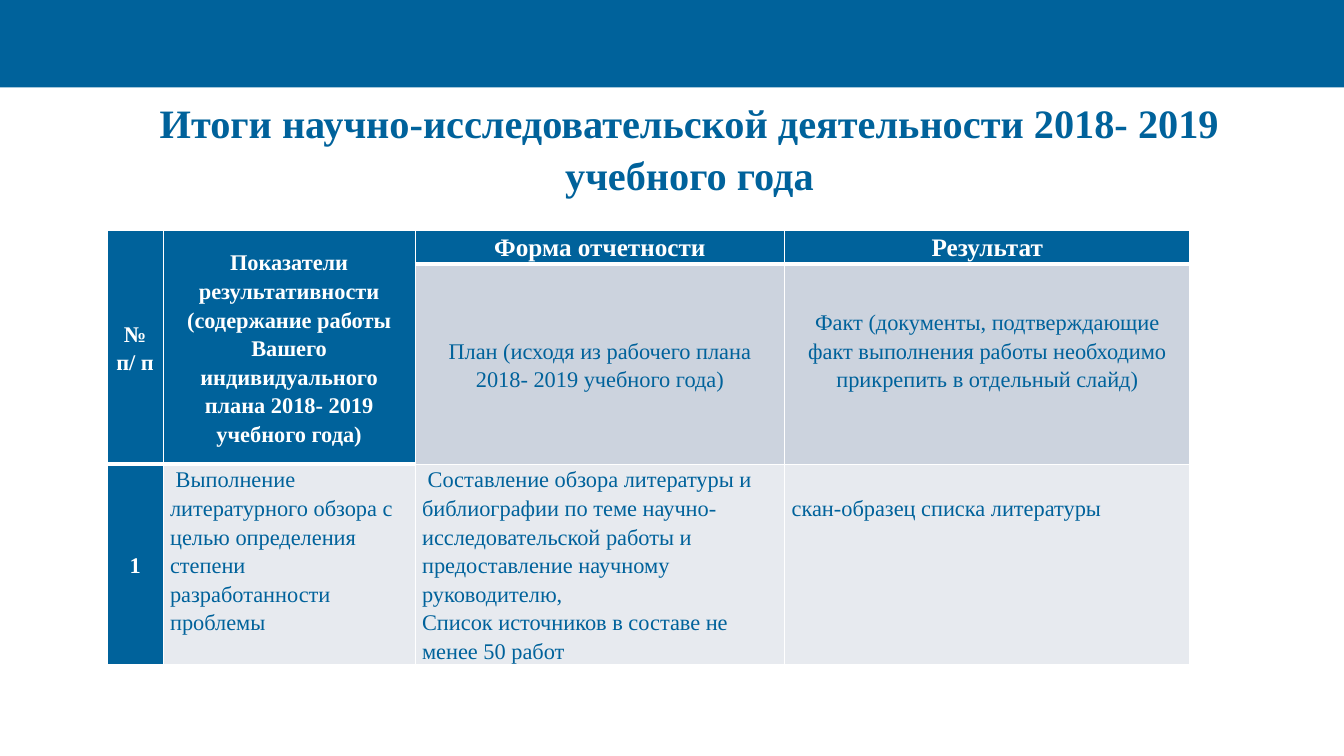
from dataclasses import dataclass

from lxml import etree
from pptx import Presentation
from pptx.dml.color import RGBColor
from pptx.enum.shapes import MSO_SHAPE
from pptx.enum.text import MSO_ANCHOR, MSO_AUTO_SIZE, PP_ALIGN
from pptx.oxml.ns import qn
from pptx.slide import Slide
from pptx.table import Table, _Cell
from pptx.text.text import _Paragraph
from pptx.util import Pt

RECTANGLE = MSO_SHAPE.RECTANGLE
TOP, MIDDLE = MSO_ANCHOR.TOP, MSO_ANCHOR.MIDDLE
LEFT, CENTER = PP_ALIGN.LEFT, PP_ALIGN.CENTER
NO_AUTOFIT = MSO_AUTO_SIZE.NONE
TITLE_ONLY_LAYOUT = 5


@dataclass(frozen=True)
class Theme:
    font: str = "Times New Roman"
    blue: str = "00629B"
    white: str = "FFFFFF"
    plan_fill: str = "CCD3DE"
    body_fill: str = "E7EAEF"
    title_size: float = 28.8
    heading_size: float = 18
    body_size: float = 16
    line_spacing: float = 1.15
    thin_border: float = 1
    thick_border: float = 3


THEME = Theme()


@dataclass(frozen=True)
class CellText:
    row: int
    column: int
    paragraphs: tuple[str, ...]
    fill: str
    color: str = THEME.blue
    size: float = THEME.body_size
    bold: bool = False
    align: PP_ALIGN = LEFT
    anchor: MSO_ANCHOR = TOP
    row_span: int = 1
    top_margin: float = 0
    bottom_margin: float = 0
    first_indent: float = 0


HEADER = {"fill": THEME.blue, "color": THEME.white, "bold": True, "align": CENTER}
PLAN = {"fill": THEME.plan_fill, "align": CENTER, "anchor": MIDDLE}
BODY = {"fill": THEME.body_fill}

TITLE = "Итоги научно-исследовательской деятельности 2018- 2019 учебного года"
COLUMN_WIDTHS = (40, 180, 264, 289.5)
ROW_HEIGHTS = (24, 142, 143)
BLANK_LINE = 20.5
CELLS = (
    CellText(0, 0, ("№ п/ п",), row_span=2, anchor=MIDDLE, **HEADER),
    CellText(0, 1, ("Показатели результативности",
                    "(содержание работы Вашего индивидуального плана 2018- 2019 учебного года)"),
             row_span=2, anchor=MIDDLE, **HEADER),
    CellText(0, 2, ("Форма отчетности",), size=THEME.heading_size, **HEADER),
    CellText(0, 3, ("Результат",), size=THEME.heading_size, **HEADER),
    CellText(1, 2, ("План (исходя из рабочего плана 2018- 2019 учебного года)",), **PLAN),
    CellText(1, 3, ("Факт (документы, подтверждающие факт выполнения работы "
                    "необходимо прикрепить в отдельный слайд)",),
             bottom_margin=BLANK_LINE, **PLAN),
    CellText(2, 0, ("1",), anchor=MIDDLE, **HEADER),
    CellText(2, 1, ("Выполнение литературного обзора с целью определения степени "
                    "разработанности проблемы",), first_indent=4, **BODY),
    CellText(2, 2, ("Составление обзора литературы и библиографии по теме "
                    "научно-исследовательской работы и предоставление научному руководителю,",
                    "Список источников в составе не менее 50 работ"), first_indent=4, **BODY),
    CellText(2, 3, ("скан-образец списка литературы",), top_margin=BLANK_LINE, **BODY),
)


def apply_format(target: object, values: dict[str, object]) -> None:
    for name, value in values.items():
        setattr(target, name, value)


def format_paragraph(paragraph: _Paragraph, size: float, color: str, bold: bool,
                     align: PP_ALIGN, line_spacing: float) -> None:
    apply_format(paragraph, {"alignment": align, "line_spacing": line_spacing})
    apply_format(paragraph.font, {"name": THEME.font, "size": Pt(size), "bold": bold})
    paragraph.font.color.rgb = RGBColor.from_string(color)


def border_below(row: int, column: int) -> float:
    """Width of the line under a cell: thick where the blue header ends."""
    ends_header = row == 0 or (row == 1 and column < 2)
    return THEME.thick_border if ends_header else THEME.thin_border


def draw_borders(cell: _Cell, row: int, column: int) -> None:
    widths = {"a:lnL": THEME.thin_border, "a:lnR": THEME.thin_border,
              "a:lnT": border_below(row - 1, column), "a:lnB": border_below(row, column)}
    properties = cell._tc.get_or_add_tcPr()
    for tag, width in widths.items():
        line = etree.SubElement(properties, qn(tag), w=str(Pt(width)))
        fill = etree.SubElement(line, qn("a:solidFill"))
        etree.SubElement(fill, qn("a:srgbClr"), val=THEME.white)


def fill_cell(table: Table, content: CellText) -> None:
    cell = table.cell(content.row, content.column)
    if content.row_span > 1:
        cell.merge(table.cell(content.row + content.row_span - 1, content.column))
    apply_format(cell, {
        "margin_left": Pt(5), "margin_right": Pt(5),
        "margin_top": Pt(content.top_margin), "margin_bottom": Pt(content.bottom_margin),
        "vertical_anchor": content.anchor,
    })
    cell.fill.solid()
    cell.fill.fore_color.rgb = RGBColor.from_string(content.fill)
    cell.text = "\n".join(content.paragraphs)
    for paragraph in cell.text_frame.paragraphs:
        format_paragraph(paragraph, content.size, content.color, content.bold,
                         content.align, THEME.line_spacing)
    if content.first_indent:
        first = cell.text_frame.paragraphs[0]
        first._p.get_or_add_pPr().set("indent", str(Pt(content.first_indent)))


def add_top_bar(slide: Slide, width: int) -> None:
    bar = slide.shapes.add_shape(RECTANGLE, 0, 0, width, Pt(62.5))
    bar.shadow.inherit = False
    bar.fill.solid()
    bar.fill.fore_color.rgb = RGBColor.from_string(THEME.blue)
    bar.line.fill.background()


def set_title(slide: Slide) -> None:
    title = slide.shapes.title
    apply_format(title, {"left": Pt(60.5), "top": Pt(72), "width": Pt(864), "height": Pt(65)})
    frame = title.text_frame
    frame.text = TITLE
    apply_format(frame, {"word_wrap": True, "auto_size": NO_AUTOFIT, "vertical_anchor": MIDDLE})
    format_paragraph(frame.paragraphs[0], THEME.title_size, THEME.blue, True, CENTER, 1.08)


def add_results_table(slide: Slide) -> None:
    table = slide.shapes.add_table(
        len(ROW_HEIGHTS), len(COLUMN_WIDTHS), Pt(76.5), Pt(164.5),
        Pt(sum(COLUMN_WIDTHS)), Pt(sum(ROW_HEIGHTS))).table
    apply_format(table, {"first_row": False, "horz_banding": False})
    for column, width in zip(table.columns, COLUMN_WIDTHS):
        column.width = Pt(width)
    for row, height in zip(table.rows, ROW_HEIGHTS):
        row.height = Pt(height)
    for row in range(len(ROW_HEIGHTS)):
        for column in range(len(COLUMN_WIDTHS)):
            draw_borders(table.cell(row, column), row, column)
    for content in CELLS:
        fill_cell(table, content)


def main() -> None:
    presentation = Presentation()
    apply_format(presentation, {"slide_width": Pt(960), "slide_height": Pt(540)})
    slide = presentation.slides.add_slide(presentation.slide_layouts[TITLE_ONLY_LAYOUT])
    add_top_bar(slide, presentation.slide_width)
    set_title(slide)
    add_results_table(slide)
    presentation.save("out.pptx")


if __name__ == "__main__":
    main()
